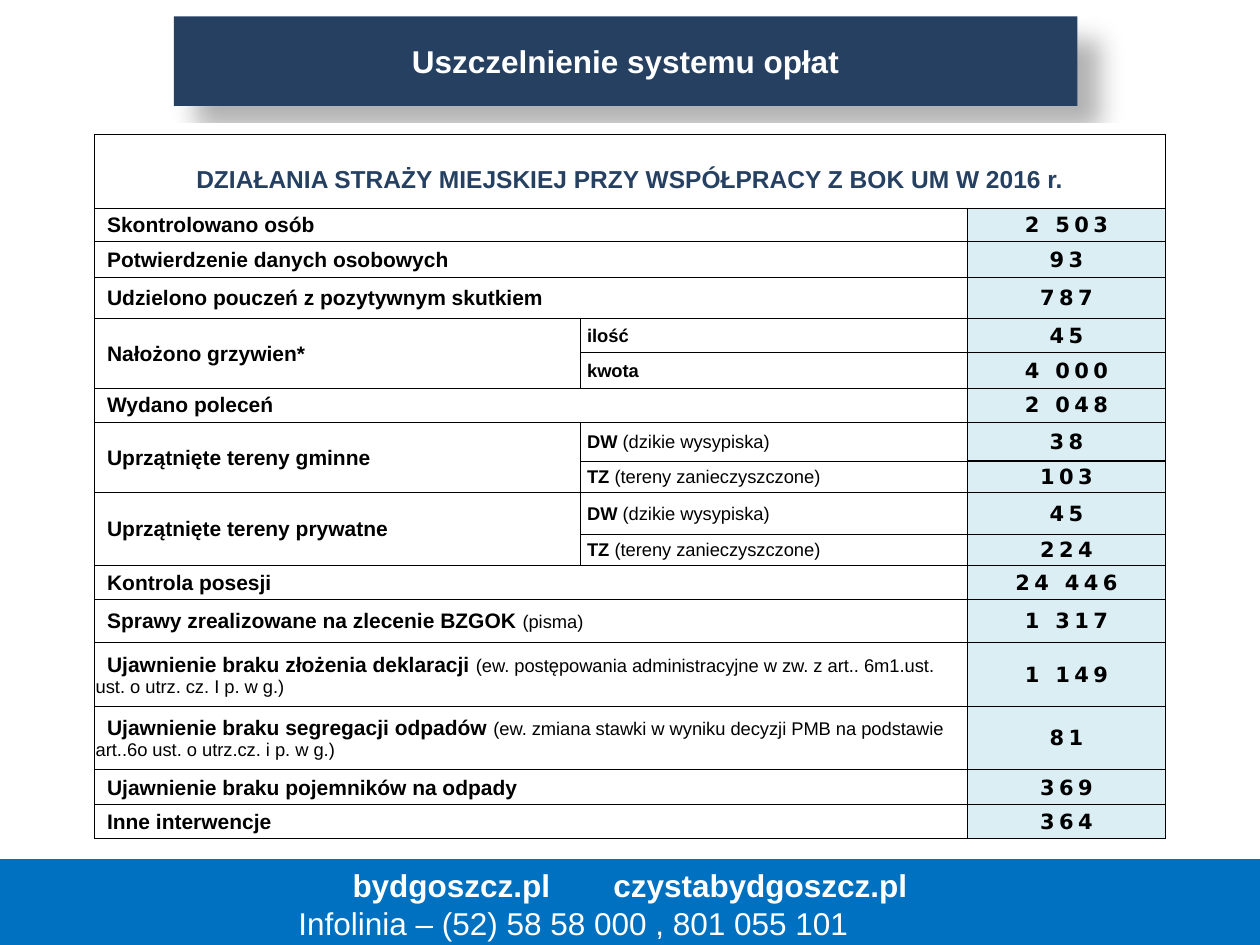
from lxml import etree
from pptx import Presentation
from pptx.dml.color import RGBColor
from pptx.enum.shapes import MSO_SHAPE
from pptx.enum.text import MSO_ANCHOR, PP_ALIGN
from pptx.oxml import parse_xml
from pptx.oxml.ns import nsdecls, qn
from pptx.util import Inches, Pt

RECTANGLE = MSO_SHAPE.RECTANGLE
MIDDLE, BOTTOM = MSO_ANCHOR.MIDDLE, MSO_ANCHOR.BOTTOM
LEFT, CENTER = PP_ALIGN.LEFT, PP_ALIGN.CENTER
TITLE_ONLY = 5

COLORS = {
    "navy": "254061",
    "blue": "0070C0",
    "pale": "DBEEF4",
    "white": "FFFFFF",
    "black": "000000",
}
TEXT_FONT, NUMBER_FONT = "Arial", "DejaVu Sans"

HEADING = "DZIAŁANIA STRAŻY MIEJSKIEJ PRZY WSPÓŁPRACY Z BOK UM W 2016 r."
HEADING_HEIGHT = 0.58
COLUMN_WIDTHS = (3.86, 3.07, 1.57)
DUMPS = ("DW ", "(dzikie wysypiska)")
LITTER = ("TZ ", "(tereny zanieczyszczone)")
# Height, label with note (None continues the label above), detail with note, value
ROWS = [
    (0.27, ("Skontrolowano osób", ""), None, "2 503"),
    (0.28, ("Potwierdzenie danych osobowych", ""), None, "93"),
    (0.33, ("Udzielono pouczeń z pozytywnym skutkiem", ""), None, "787"),
    (0.27, ("Nałożono grzywien*", ""), ("ilość", ""), "45"),
    (0.28, None, ("kwota", ""), "4 000"),
    (0.27, ("Wydano poleceń", ""), None, "2 048"),
    (0.31, ("Uprzątnięte tereny gminne", ""), DUMPS, "38"),
    (0.25, None, LITTER, "103"),
    (0.33, ("Uprzątnięte tereny prywatne", ""), DUMPS, "45"),
    (0.25, None, LITTER, "224"),
    (0.27, ("Kontrola posesji", ""), None, "24 446"),
    (0.34, ("Sprawy zrealizowane na zlecenie BZGOK ", "(pisma)"), None, "1 317"),
    (0.51, ("Ujawnienie braku złożenia deklaracji ",
            "(ew. postępowania administracyjne w zw. z art.. 6m1.ust. "
            "ust. o utrz. cz. I p. w g.)"), None, "1 149"),
    (0.5, ("Ujawnienie braku segregacji odpadów ",
           "(ew. zmiana stawki w wyniku decyzji PMB na podstawie "
           "art..6o ust. o utrz.cz. i p. w g.)"), None, "81"),
    (0.28, ("Ujawnienie braku pojemników na odpady", ""), None, "369"),
    (0.27, ("Inne interwencje", ""), None, "364"),
]
FOOTER = ["bydgoszcz.pl \t czystabydgoszcz.pl", "Infolinia – (52) 58 58 000 , 801 055 101"]


class SlideBuilder:
    def __init__(self, presentation):
        self.slide = presentation.slides.add_slide(presentation.slide_layouts[TITLE_ONLY])

    def color(self, name):
        return RGBColor.from_string(COLORS[name])

    def format_run(self, run, size, color="black", bold=True, font=TEXT_FONT):
        run.font.name = font
        run.font.size = Pt(size)
        run.font.bold = bold
        run.font.color.rgb = self.color(color)

    def title(self, text, left, top, width, height):
        """Turn the title placeholder into a rounded banner with a soft shadow."""
        shape = self.slide.shapes.title
        shape.left, shape.top = Inches(left), Inches(top)
        shape.width, shape.height = Inches(width), Inches(height)
        properties = shape._element.spPr
        properties.append(parse_xml(
            f'<a:prstGeom {nsdecls("a")} prst="roundRect"><a:avLst/></a:prstGeom>'))
        shape.fill.solid()
        shape.fill.fore_color.rgb = self.color("navy")
        shape.line.fill.background()
        properties.append(parse_xml(
            f'<a:effectLst {nsdecls("a")}>'
            f'<a:outerShdw blurRad="{Pt(15)}" dist="{Pt(18)}" dir="2700000" algn="tl" '
            f'rotWithShape="0"><a:srgbClr val="{COLORS["black"]}"><a:alpha val="30000"/>'
            '</a:srgbClr></a:outerShdw></a:effectLst>'))
        shape.text_frame.text = text
        shape.text_frame.vertical_anchor = MIDDLE
        paragraph = shape.text_frame.paragraphs[0]
        paragraph.alignment = CENTER
        self.format_run(paragraph.runs[0], 18, "white")

    def rectangle(self, color, line_width, left, top, width, height):
        shape = self.slide.shapes.add_shape(
            RECTANGLE, Inches(left), Inches(top), Inches(width), Inches(height))
        shape.shadow.inherit = False
        shape.fill.solid()
        shape.fill.fore_color.rgb = self.color(color)
        shape.line.color.rgb = self.color(color)
        shape.line.width = Pt(line_width)
        return shape

    def footer(self, lines, left, top, width, height):
        frame = self.rectangle("blue", 0.75, left, top, width, height).text_frame
        frame.word_wrap = True
        frame.vertical_anchor = MIDDLE
        frame.text = "\n".join(lines)
        for paragraph, bold in zip(frame.paragraphs, (True, False)):
            paragraph.alignment = CENTER
            self.format_run(paragraph.runs[0], 18, "white", bold)
        frame.paragraphs[1]._p.get_or_add_pPr().set("marR", str(Inches(0.9)))

    def style_cell(self, cell, fill=None, top=0.5, bottom=0.5):
        """Set margins, fill and black borders; top and bottom are widths in points."""
        cell.margin_left = cell.margin_right = cell.margin_top = Inches(0.01)
        cell.margin_bottom = 0
        cell.vertical_anchor = MIDDLE
        properties = cell._tc.get_or_add_tcPr()
        for side, width in (("L", 0.5), ("R", 0.5), ("T", top), ("B", bottom)):
            line = etree.SubElement(properties, qn(f"a:ln{side}"), w=str(Pt(width)))
            solid = etree.SubElement(line, qn("a:solidFill"))
            etree.SubElement(solid, qn("a:srgbClr"), val=COLORS["black"])
        if fill:
            cell.fill.solid()
            cell.fill.fore_color.rgb = self.color(fill)
        else:
            cell.fill.background()

    def label(self, cell, text, note, size, indent):
        """Write bold text and a plain note, indenting only the first line."""
        paragraph = cell.text_frame.paragraphs[0]
        paragraph.text = text
        paragraph.alignment = LEFT
        paragraph._p.get_or_add_pPr().set("indent", str(Inches(indent)))
        self.format_run(paragraph.runs[0], size)
        if note:
            run = paragraph.add_run()
            run.text = note
            self.format_run(run, 10.5, bold=False)

    def value(self, cell, text):
        paragraph = cell.text_frame.paragraphs[0]
        paragraph.text = text
        paragraph.alignment = CENTER
        run = paragraph.runs[0]
        self.format_run(run, 12, font=NUMBER_FONT)
        run._r.get_or_add_rPr().set("spc", "250")

    def heading(self, table):
        for cell in table.rows[0].cells:
            self.style_cell(cell)
        cell = table.cell(0, 0)
        cell.merge(table.cell(0, 2))
        cell.vertical_anchor = BOTTOM
        cell.margin_bottom = Inches(0.11)
        paragraph = cell.text_frame.paragraphs[0]
        paragraph.text = HEADING
        paragraph.alignment = CENTER
        self.format_run(paragraph.runs[0], 14, "navy")

    def table(self, rows, left, top):
        heights = [HEADING_HEIGHT] + [row[0] for row in rows]
        table = self.slide.shapes.add_table(
            len(heights), len(COLUMN_WIDTHS), Inches(left), Inches(top),
            Inches(sum(COLUMN_WIDTHS)), Inches(sum(heights))).table
        table.first_row = table.horz_banding = False
        for column, width in zip(table.columns, COLUMN_WIDTHS):
            column.width = Inches(width)
        for row, height in zip(table.rows, heights):
            row.height = Inches(height)
        self.heading(table)
        for index, (_, label, detail, value) in enumerate(rows, start=1):
            label_cell, detail_cell, value_cell = table.rows[index].cells
            self.style_cell(label_cell)
            self.style_cell(detail_cell)
            self.style_cell(value_cell, "pale",
                            top=1 if value == "103" else 0.5,
                            bottom=1 if value == "38" else 0.5)
            self.value(value_cell, value)
            if label:
                self.label(label_cell, *label, size=12, indent=0.09)
            else:
                table.cell(index - 1, 0).merge(label_cell)
            if detail:
                self.label(detail_cell, *detail, size=10.5, indent=0.04)
            else:
                label_cell.merge(detail_cell)


def main():
    presentation = Presentation()
    presentation.slide_width, presentation.slide_height = Inches(10), Inches(7.5)
    builder = SlideBuilder(presentation)
    builder.title("Uszczelnienie systemu opłat", 1.38, 0.13, 7.17, 0.71)
    builder.rectangle("white", 2, 0.91, 0.99, 8.66, 5.75)
    builder.table(ROWS, 0.75, 1.07)
    builder.footer(FOOTER, 0, 6.82, 10, 0.71)
    presentation.save("out.pptx")


if __name__ == "__main__":
    main()
